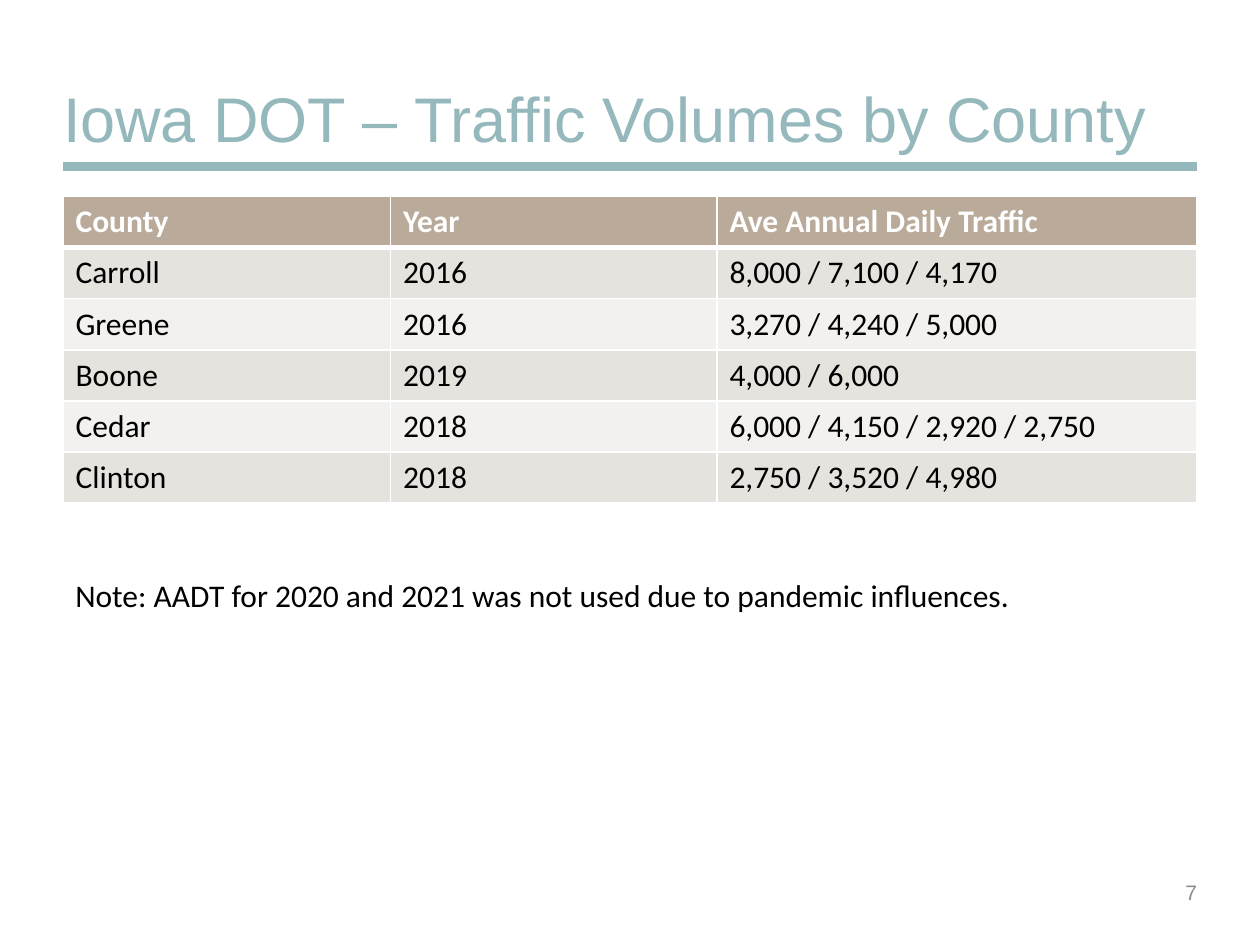
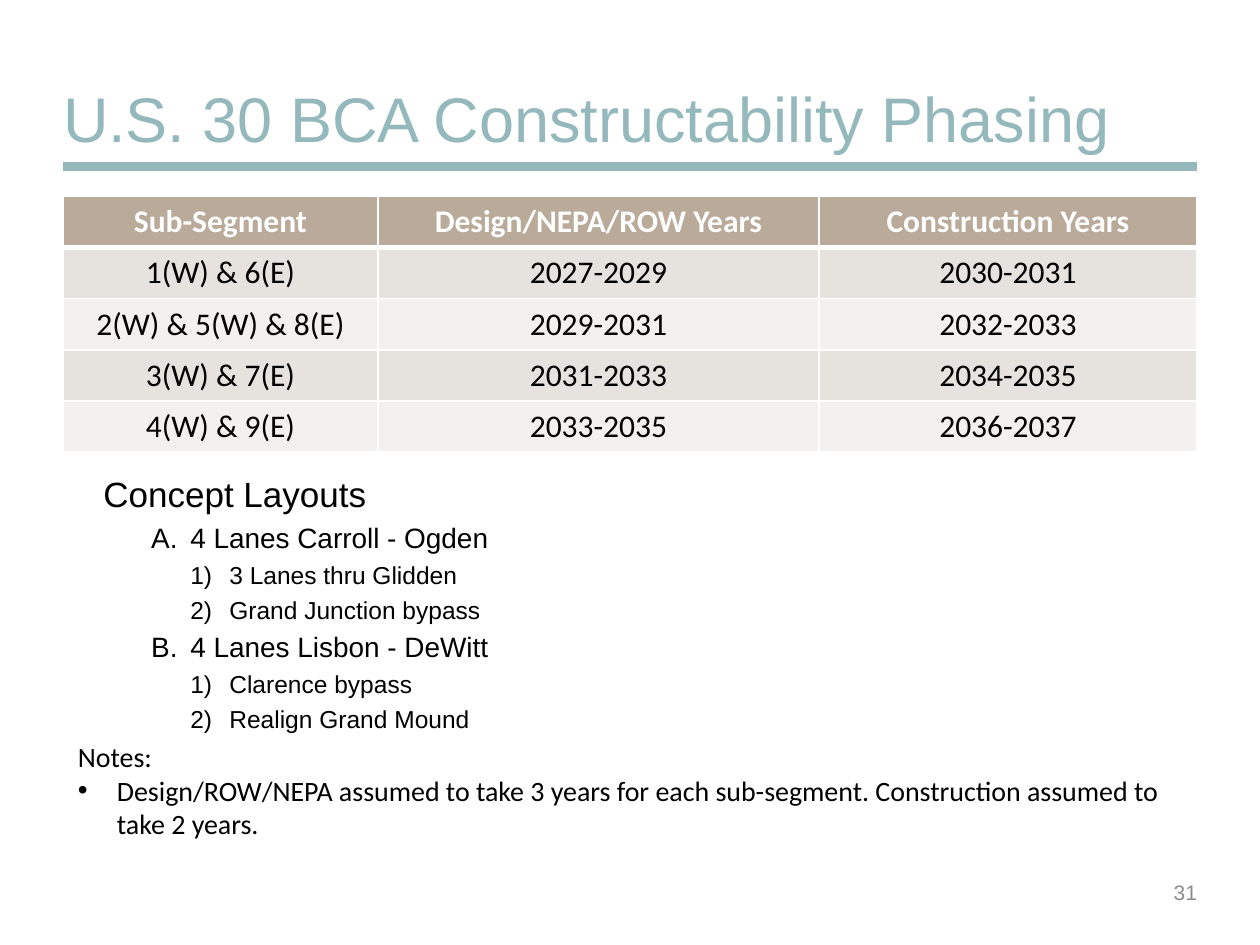
"""Build two table slides on Iowa highway traffic and construction phasing."""
from lxml import etree
from pptx import Presentation
from pptx.dml.color import RGBColor
from pptx.enum.shapes import MSO_CONNECTOR
from pptx.enum.text import MSO_ANCHOR, MSO_AUTO_SIZE, PP_ALIGN
from pptx.oxml.ns import qn
from pptx.util import Inches, Pt

STRAIGHT = MSO_CONNECTOR.STRAIGHT
BOTTOM, MIDDLE = MSO_ANCHOR.BOTTOM, MSO_ANCHOR.MIDDLE
LEFT, CENTER, RIGHT = PP_ALIGN.LEFT, PP_ALIGN.CENTER, PP_ALIGN.RIGHT
NO_FIT = MSO_AUTO_SIZE.NONE

COLORS = {
    "accent": "94B8BB", "header": "B9AA9A", "odd": "E6E2DE", "even": "F3F1EF",
    "white": "FFFFFF", "black": "000000", "number": "8C8C8C",
}
HEADING_FONT, TABLE_FONT = "Arial", "Calibri"

deck = Presentation()
deck.slide_width, deck.slide_height = Inches(10), Inches(7.5)
COLUMN, ROW = deck.slide_width / 100, deck.slide_height / 100
MARGIN, CONTENT = 5, 90
RULE_TOP, TABLE_TOP, TABLE_ROW = 17.6, 20.8, 5.4
TITLE_ONLY, TITLE_AND_BODY = deck.slide_layouts[5], deck.slide_layouts[1]


def place(left, top, width, height):
    """Turn percentages of the slide into lengths."""
    return [int(left * COLUMN), int(top * ROW), int(width * COLUMN), int(height * ROW)]


def style(para, size, font, color, align=LEFT, bold=False):
    """Format a paragraph and its runs."""
    para.alignment = align
    for span in para.runs:
        span.font.size, span.font.name, span.font.bold = Pt(size), font, bold
        span.font.color.rgb = RGBColor.from_string(COLORS[color])


slides = [
    {
        "layout": TITLE_ONLY,
        "title": "Iowa DOT – Traffic Volumes by County",
        "number": "7",
        "align": LEFT,
        "widths": [26, 25.9, 38.1],
        "rows": [
            ["County", "Year", "Ave Annual Daily Traffic"],
            ["Carroll", "2016", "8,000 / 7,100 / 4,170"],
            ["Greene", "2016", "3,270 / 4,240 / 5,000"],
            ["Boone", "2019", "4,000 / 6,000"],
            ["Cedar", "2018", "6,000 / 4,150 / 2,920 / 2,750"],
            ["Clinton", "2018", "2,750 / 3,520 / 4,980"],
        ],
        "layouts": [],
        "note_place": (5, 60.27, 90, 5.33),
        "note_size": 18,
        "note": ["Note: AADT for 2020 and 2021 was not used due to pandemic influences."],
    },
    {
        "layout": TITLE_AND_BODY,
        "title": "U.S. 30 BCA Constructability Phasing",
        "number": "31",
        "align": CENTER,
        "widths": [25, 35, 30],
        "rows": [
            ["Sub-Segment", "Design/NEPA/ROW Years", "Construction Years"],
            ["1(W) & 6(E)", "2027-2029", "2030-2031"],
            ["2(W) & 5(W) & 8(E)", "2029-2031", "2032-2033"],
            ["3(W) & 7(E)", "2031-2033", "2034-2035"],
            ["4(W) & 9(E)", "2033-2035", "2036-2037"],
        ],
        "layouts": [
            (0, "Concept Layouts"),
            (1, "4 Lanes Carroll - Ogden"),
            (2, "3 Lanes thru Glidden"),
            (2, "Grand Junction bypass"),
            (1, "4 Lanes Lisbon - DeWitt"),
            (2, "Clarence bypass"),
            (2, "Realign Grand Mound"),
        ],
        "note_place": (5.2, 77.6, 89.5, 12.13),
        "note_size": 16,
        "note": [
            "Notes:",
            "Design/ROW/NEPA assumed to take 3 years for each sub-segment. "
            "Construction assumed to take 2 years.",
        ],
    },
]

LEVELS = [
    {"size": 20, "before": 10, "margin": 0, "hang": 0, "numbering": None},
    {"size": 16, "before": 5, "margin": 0.69, "hang": 0.31, "numbering": "alphaUcPeriod"},
    {"size": 14, "before": 5, "margin": 1, "hang": 0.31, "numbering": "arabicParenR"},
]

for content in slides:
    page = deck.slides.add_slide(content["layout"])

    rule_left, rule_top, rule_width, _ = place(MARGIN, RULE_TOP, CONTENT, 0)
    rule = page.shapes.add_connector(
        STRAIGHT, rule_left, rule_top, rule_left + rule_width, rule_top)
    rule.line.color.rgb = RGBColor.from_string(COLORS["accent"])
    rule.line.width = Pt(5)
    etree.SubElement(rule._element.spPr, qn("a:effectLst"))

    title = page.shapes.title
    title.left, title.top, title.width, title.height = place(MARGIN, 7.2, CONTENT, 10)
    frame = title.text_frame
    frame.text = content["title"]
    frame.auto_size, frame.vertical_anchor, frame.margin_left = NO_FIT, BOTTOM, 0
    frame.paragraphs[0].line_spacing = 0.9
    style(frame.paragraphs[0], 36, HEADING_FONT, "accent")

    rows, widths = content["rows"], content["widths"]
    table = page.shapes.add_table(
        len(rows), len(widths),
        *place(MARGIN, TABLE_TOP, CONTENT, TABLE_ROW * len(rows))).table
    for column, width in zip(table.columns, widths):
        column.width = int(width * COLUMN)
    for row_index, row in enumerate(rows):
        is_header = row_index == 0
        fill = "header" if is_header else "odd" if row_index % 2 else "even"
        for column_index, value in enumerate(row):
            cell = table.cell(row_index, column_index)
            cell.text_frame.text = value
            style(cell.text_frame.paragraphs[0], 18, TABLE_FONT,
                  "white" if is_header else "black", content["align"], is_header)
            cell.fill.solid()
            cell.fill.fore_color.rgb = RGBColor.from_string(COLORS[fill])
            for position, side in enumerate(["lnL", "lnR", "lnT", "lnB"]):
                thick = (is_header and side == "lnB") or (row_index == 1 and side == "lnT")
                border = etree.Element(qn(f"a:{side}"), w=str(Pt(3 if thick else 1)))
                paint = etree.SubElement(border, qn("a:solidFill"))
                etree.SubElement(paint, qn("a:srgbClr"), val=COLORS["white"])
                cell._tc.get_or_add_tcPr().insert(position, border)

    number = page.shapes.add_textbox(*place(90.9, 91.73, 4.1, 5.33))
    frame = number.text_frame
    frame.text = content["number"]
    frame.word_wrap, frame.vertical_anchor, frame.margin_right = True, MIDDLE, 0
    style(frame.paragraphs[0], 12, HEADING_FONT, "number", RIGHT)

    note = page.shapes.add_textbox(*place(*content["note_place"]))
    note.text_frame.word_wrap = True
    note.text_frame.text = "\n".join(content["note"])
    for index, para in enumerate(note.text_frame.paragraphs):
        style(para, content["note_size"], TABLE_FONT, "black")
        if index:
            properties = para._p.get_or_add_pPr()
            properties.set("marL", str(Inches(0.31)))
            properties.set("indent", str(-Inches(0.31)))
            etree.SubElement(properties, qn("a:buFont"), typeface="Arial")
            etree.SubElement(properties, qn("a:buChar"), char="•")

    if content["layouts"]:
        body = page.placeholders[1]
        body.left, body.top, body.width, body.height = place(7.2, 49.87, 35, 28.8)
        body.text_frame.text = "\n".join(text for _, text in content["layouts"])
        body.text_frame.auto_size = NO_FIT
        for para, (depth, _) in zip(body.text_frame.paragraphs, content["layouts"]):
            level = LEVELS[depth]
            para.level, para.line_spacing = depth, 0.9
            para.space_before, para.space_after = Pt(level["before"]), Pt(0)
            style(para, level["size"], HEADING_FONT, "black")
            properties = para._p.get_or_add_pPr()
            properties.set("marL", str(Inches(level["margin"])))
            properties.set("indent", str(-Inches(level["hang"])))
            if level["numbering"]:
                etree.SubElement(properties, qn("a:buFont"), typeface="Arial")
                etree.SubElement(properties, qn("a:buAutoNum"), type=level["numbering"])
            else:
                etree.SubElement(properties, qn("a:buNone"))

deck.save("out.pptx")
